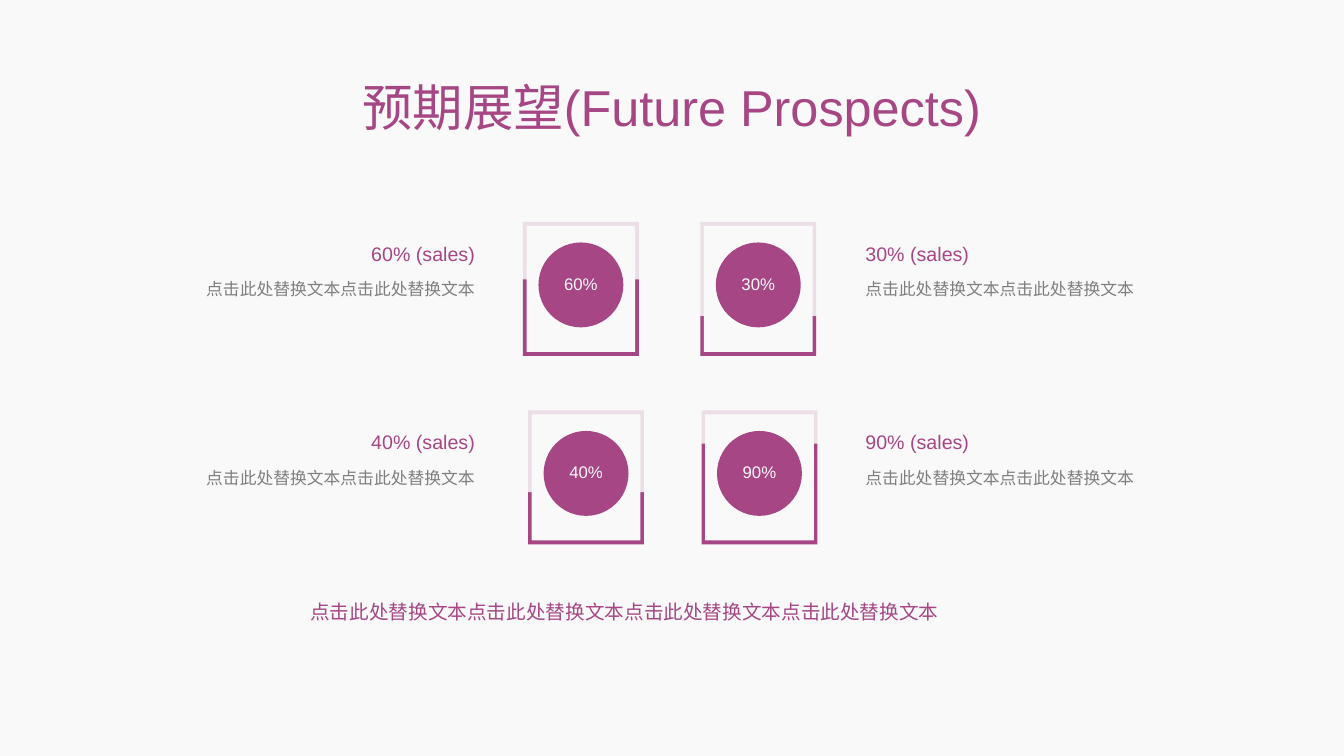
from dataclasses import dataclass

from lxml.etree import SubElement
from pptx import Presentation
from pptx.dml.color import RGBColor
from pptx.enum.shapes import MSO_SHAPE
from pptx.enum.text import MSO_ANCHOR, PP_ALIGN
from pptx.oxml.ns import qn
from pptx.util import Cm, Pt


@dataclass(frozen=True)
class Theme:
    font: str = "Arial"
    accent: RGBColor = RGBColor(0xA6, 0x46, 0x85)
    background: RGBColor = RGBColor(0xF9, 0xF9, 0xF9)
    muted: RGBColor = RGBColor(0x7F, 0x7F, 0x7F)
    title_size: int = 36
    heading_size: int = 14
    body_size: int = 12


THEME = Theme()
FILLER = "点击此处替换文本"

GAUGE_WIDTH, GAUGE_HEIGHT = 2.92, 3.38
FRAME_X, FRAME_Y = 0.09, 0.1
COVER_X, COVER_Y = 0.08, 0.2
CIRCLE_TOP, CIRCLE_SIZE = 0.52, 2.14
LABEL_WIDTH, LABEL_HEIGHT = 1.3, 0.81
HEADING_WIDTH, HEADING_HEIGHT = 5.72, 0.81
BODY_WIDTH, BODY_HEIGHT, BODY_DROP = 7.19, 2.26, 0.78
CAPTION_DROP = 0.57
LEFT_CAPTION_EDGE, RIGHT_CAPTION_EDGE = 11.97, 21.81
ROW_TOPS = (5.59, 10.34)

# value, row, gauge left, cover height, caption on the left side
GAUGES = (
    ("60%", 0, 13.18, 1.65, True),
    ("30%", 0, 17.65, 2.57, False),
    ("40%", 1, 13.31, 2.26, True),
    ("90%", 1, 17.68, 1.04, False),
)


def add_text(slide, text, left, top, width, height, *, size, color=THEME.accent,
             align=PP_ALIGN.LEFT, anchor=MSO_ANCHOR.TOP, spacing=0.9, before=10):
    box = slide.shapes.add_textbox(Cm(left), Cm(top), Cm(width), Cm(height))
    frame = box.text_frame
    frame.word_wrap = True
    frame.vertical_anchor = anchor
    frame.margin_left = frame.margin_right = 0
    frame.margin_top = frame.margin_bottom = 0
    paragraph = frame.paragraphs[0]
    paragraph.alignment = align
    paragraph.line_spacing = spacing
    paragraph.space_before = Pt(before)
    run = paragraph.add_run()
    run.text = text
    run.font.name = THEME.font
    run.font.size = Pt(size)
    run.font.color.rgb = color


def add_filled_shape(slide, kind, left, top, width, height, color, opacity=100):
    shape = slide.shapes.add_shape(kind, Cm(left), Cm(top), Cm(width), Cm(height))
    shape.shadow.inherit = False
    shape.line.fill.background()
    shape.fill.solid()
    shape.fill.fore_color.rgb = color
    if opacity < 100:
        color_element = shape.fill._xPr.find(qn("a:solidFill"))[0]
        SubElement(color_element, qn("a:alpha"), val=str(opacity * 1000))


def add_gauge(slide, value, left, top, cover_height):
    """Draw a frame whose upper part is faded, with the value on a disc inside."""
    rectangle = MSO_SHAPE.RECTANGLE
    add_filled_shape(slide, rectangle, left, top, GAUGE_WIDTH, GAUGE_HEIGHT, THEME.accent)
    add_filled_shape(slide, rectangle, left + FRAME_X, top + FRAME_Y,
                     GAUGE_WIDTH - 2 * FRAME_X, GAUGE_HEIGHT - 2 * FRAME_Y,
                     THEME.background)
    add_filled_shape(slide, rectangle, left - COVER_X, top - COVER_Y,
                     GAUGE_WIDTH + 2 * COVER_X, cover_height, THEME.background, opacity=85)
    add_filled_shape(slide, MSO_SHAPE.FLOWCHART_CONNECTOR,
                     left + (GAUGE_WIDTH - CIRCLE_SIZE) / 2, top + CIRCLE_TOP,
                     CIRCLE_SIZE, CIRCLE_SIZE, THEME.accent)
    add_text(slide, value, left + (GAUGE_WIDTH - LABEL_WIDTH) / 2,
             top + CIRCLE_TOP + (CIRCLE_SIZE - LABEL_HEIGHT) / 2,
             LABEL_WIDTH, LABEL_HEIGHT, size=THEME.body_size, color=THEME.background,
             align=PP_ALIGN.CENTER, anchor=MSO_ANCHOR.MIDDLE)


def add_caption(slide, value, top, on_left):
    """Place heading and body against the edge that faces the gauges."""
    align = PP_ALIGN.RIGHT if on_left else PP_ALIGN.LEFT

    def start(width):
        return LEFT_CAPTION_EDGE - width if on_left else RIGHT_CAPTION_EDGE

    add_text(slide, f"{value} (sales)", start(HEADING_WIDTH), top,
             HEADING_WIDTH, HEADING_HEIGHT, size=THEME.heading_size, align=align)
    add_text(slide, FILLER * 2, start(BODY_WIDTH), top + BODY_DROP,
             BODY_WIDTH, BODY_HEIGHT, size=THEME.body_size, color=THEME.muted,
             align=align, spacing=Pt(17))


def build_prospects_slide(presentation):
    slide = presentation.slides.add_slide(presentation.slide_layouts[6])
    slide.background.fill.solid()
    slide.background.fill.fore_color.rgb = THEME.background
    add_text(slide, "预期展望(Future Prospects)", 4.23, 1.85, 25.4, 1.5,
             size=THEME.title_size, align=PP_ALIGN.CENTER, anchor=MSO_ANCHOR.MIDDLE,
             spacing=Pt(48), before=0)
    for value, row, left, cover_height, on_left in GAUGES:
        add_gauge(slide, value, left, ROW_TOPS[row], cover_height)
        add_caption(slide, value, ROW_TOPS[row] + CAPTION_DROP, on_left)
    add_text(slide, FILLER * 4, 7.82, 14.81, 18.21, 1.27,
             size=THEME.heading_size, spacing=1.5)


def main():
    presentation = Presentation()
    presentation.slide_width = Cm(33.87)
    presentation.slide_height = Cm(19.05)
    build_prospects_slide(presentation)
    presentation.save("out.pptx")


if __name__ == "__main__":
    main()
